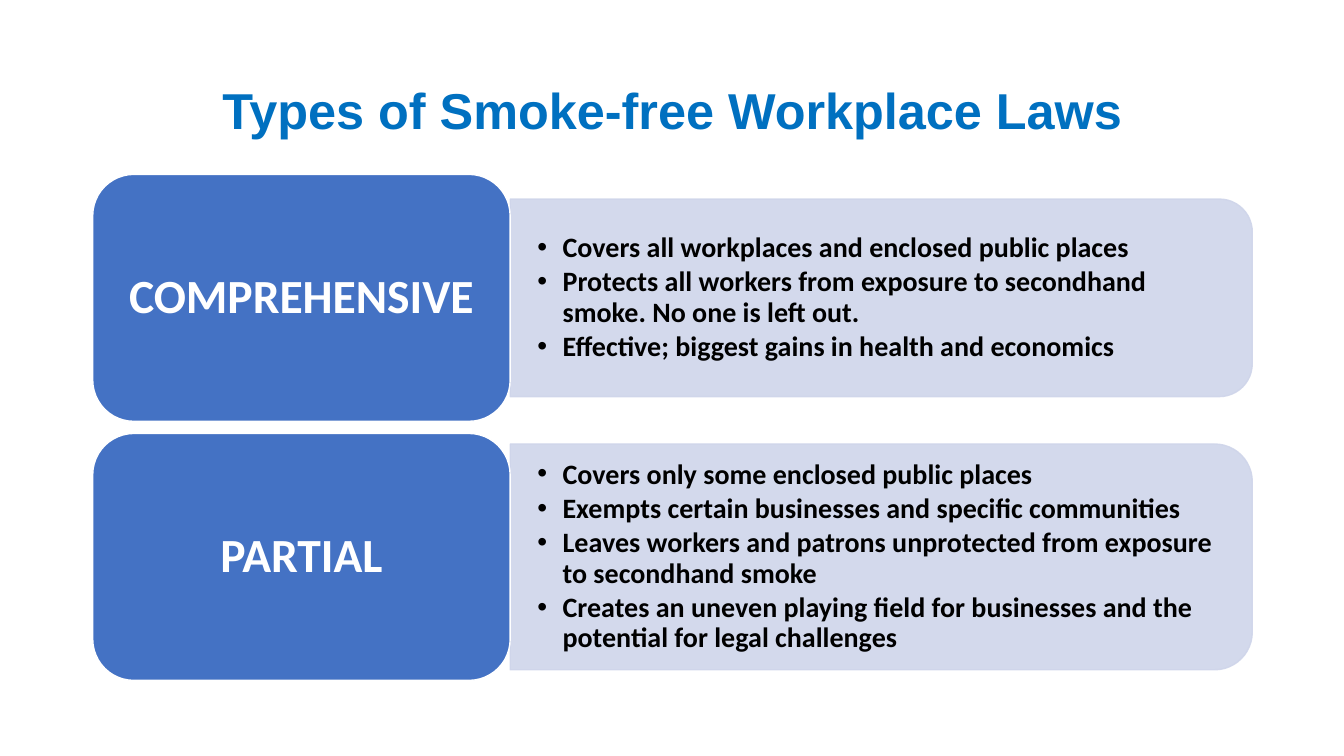
import pptx
import pptx.dml.color
import pptx.enum.shapes
import pptx.enum.text
import pptx.oxml
import pptx.oxml.ns
import pptx.util
from pptx.util import Inches

COLORS = {"title": "0070C0", "label": "4472C4", "panel": "CFD5EA", "white": "FFFFFF", "text": "000000"}
FORMATS = {
    "title": {"name": "Arial", "size": pptx.util.Pt(36), "bold": True},
    "label": {"name": "Calibri", "size": pptx.util.Pt(34), "bold": True},
    "list": {"name": "Calibri", "size": pptx.util.Pt(20), "bold": True},
}
LAWS = [
    ("COMPREHENSIVE", 1.96, [
        "Covers all workplaces and enclosed public places",
        "Protects all workers from exposure to secondhand smoke. No one is left out.",
        "Effective; biggest gains in health and economics",
    ]),
    ("PARTIAL", 2.24, [
        "Covers only some enclosed public places",
        "Exempts certain businesses and specific communities",
        "Leaves workers and patrons unprotected from exposure to secondhand smoke",
        "Creates an uneven playing field for businesses and the potential for legal challenges",
    ]),
]
LEFT, TOP = 0.92, 1.73
LABEL_WIDTH, LABEL_HEIGHT, ROW_STEP = 4.14, 2.45, 2.57
PANEL_LEFT, PANEL_WIDTH = 5.06, 7.36


class LawSlide:
    def __init__(self, presentation):
        self.slide = presentation.slides.add_slide(presentation.slide_layouts[3])

    def color(self, name):
        return pptx.dml.color.RGBColor.from_string(COLORS[name])

    def place(self, shape, left, top, width, height):
        values = {"left": left, "top": top, "width": width, "height": height}
        for name, value in values.items():
            setattr(shape, name, Inches(value))

    def frame(self, shape, horizontal, vertical):
        values = {
            "word_wrap": True,
            "auto_size": pptx.enum.text.MSO_AUTO_SIZE.NONE,
            "vertical_anchor": pptx.enum.text.MSO_ANCHOR.MIDDLE,
            "margin_left": Inches(horizontal),
            "margin_right": Inches(horizontal),
            "margin_top": Inches(vertical),
            "margin_bottom": Inches(vertical),
        }
        for name, value in values.items():
            setattr(shape.text_frame, name, value)

    def fill_paragraph(self, paragraph, text, style, color, alignment, space_after=0):
        values = {
            "alignment": alignment,
            "line_spacing": 0.9,
            "space_before": pptx.util.Pt(0),
            "space_after": pptx.util.Pt(space_after),
        }
        for name, value in values.items():
            setattr(paragraph, name, value)
        run = paragraph.add_run()
        run.text = text
        for name, value in FORMATS[style].items():
            setattr(run.font, name, value)
        run.font.color.rgb = self.color(color)

    def title(self, text):
        shape = self.slide.shapes.title
        self.place(shape, 0.92, 0.4, 11.5, 1.45)
        self.frame(shape, 0.1, 0.05)
        self.fill_paragraph(shape.text_frame.paragraphs[0], text, "title", "title",
                            pptx.enum.text.PP_ALIGN.CENTER)

    def block(self, kind, left, top, width, height, fill, line):
        shape = self.slide.shapes.add_shape(
            kind, Inches(left), Inches(top), Inches(width), Inches(height))
        shape.shadow.inherit = False
        shape.fill.solid()
        shape.fill.fore_color.rgb = self.color(fill)
        shape.line.color.rgb = self.color(line)
        shape.line.width = pptx.util.Pt(1)
        return shape

    def label(self, text, top):
        shape = self.block(pptx.enum.shapes.MSO_SHAPE.ROUNDED_RECTANGLE,
                           LEFT, top, LABEL_WIDTH, LABEL_HEIGHT, "label", "white")
        self.frame(shape, 0.14, 0.07)
        self.fill_paragraph(shape.text_frame.paragraphs[0], text, "label", "white",
                            pptx.enum.text.PP_ALIGN.CENTER)

    def panel(self, middle, height):
        left = PANEL_LEFT + (PANEL_WIDTH - height) / 2
        shape = self.block(pptx.enum.shapes.MSO_SHAPE.ROUND_2_SAME_RECTANGLE,
                           left, middle - PANEL_WIDTH / 2, height, PANEL_WIDTH, "panel", "panel")
        shape.rotation = 90
        for color in shape.element.spPr.iter(pptx.oxml.ns.qn("a:srgbClr")):
            alpha = pptx.oxml.parse_xml(f'<a:alpha {pptx.oxml.ns.nsdecls("a")} val="90000"/>')
            color.append(alpha)
        return shape

    def bullets(self, index, items, middle, panel_height):
        shape = self.slide.placeholders[index]
        height = panel_height * 0.9
        self.place(shape, PANEL_LEFT, middle - height / 2, PANEL_WIDTH - 0.1, height)
        self.frame(shape, 0.27, 0.14)
        for number, item in enumerate(items):
            paragraph = shape.text_frame.add_paragraph() if number else shape.text_frame.paragraphs[0]
            properties = paragraph._p.get_or_add_pPr()
            properties.set("marL", str(Inches(0.25)))
            properties.set("indent", str(Inches(-0.25)))
            properties.append(pptx.oxml.parse_xml(
                f'<a:buChar {pptx.oxml.ns.nsdecls("a")} char="•"/>'))
            self.fill_paragraph(paragraph, item, "list", "text", pptx.enum.text.PP_ALIGN.LEFT, 3)
        return shape

    def law(self, number, name, panel_height, items):
        top = TOP + number * ROW_STEP
        middle = top + LABEL_HEIGHT / 2
        panel = self.panel(middle, panel_height)
        bullets = self.bullets(number + 1, items, middle, panel_height)
        bullets.element.addprevious(panel.element)
        self.label(name, top)


def main():
    presentation = pptx.Presentation()
    presentation.slide_width = Inches(13.33)
    presentation.slide_height = Inches(7.5)
    law_slide = LawSlide(presentation)
    law_slide.title("Types of Smoke-free Workplace Laws")
    for number, (name, panel_height, items) in enumerate(LAWS):
        law_slide.law(number, name, panel_height, items)
    presentation.save("out.pptx")


if __name__ == "__main__":
    main()
